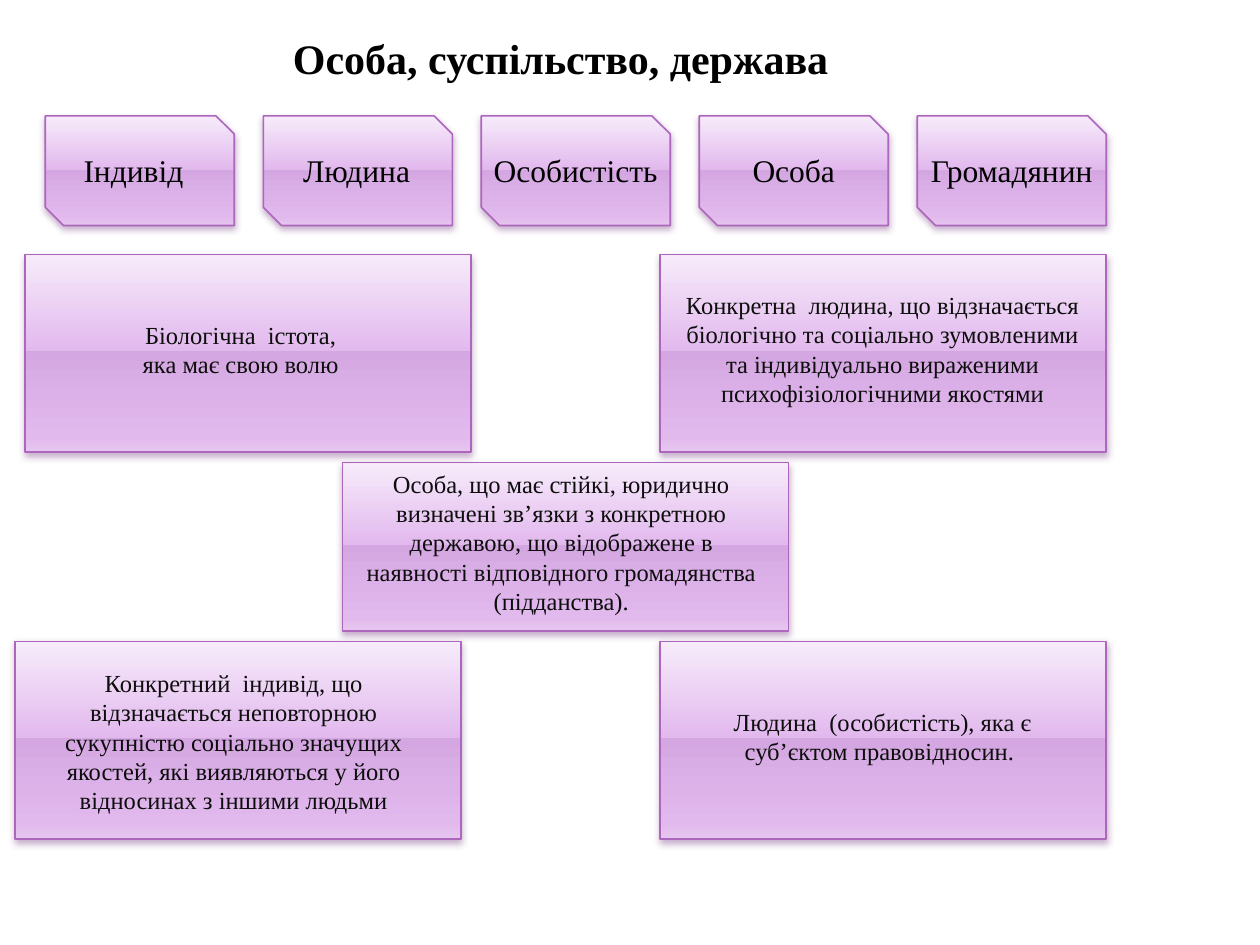
from lxml import etree
from pptx import Presentation
from pptx.dml.color import RGBColor
from pptx.enum.shapes import MSO_SHAPE as SHAPE
from pptx.enum.text import MSO_ANCHOR as ANCHOR, MSO_AUTO_SIZE as AUTO, PP_ALIGN as ALIGN
from pptx.oxml.ns import qn
from pptx.util import Inches, Pt

BLACK = RGBColor(0x00, 0x00, 0x00)
INK = RGBColor(0x0D, 0x0D, 0x0D)
BORDER = RGBColor(0xAC, 0x66, 0xBB)
SHADOW = RGBColor(0x6E, 0x30, 0x7B)
PALE = RGBColor(0xF7, 0xEB, 0xFB)
LILAC = RGBColor(0xE2, 0xB9, 0xED)
MAUVE = RGBColor(0xD5, 0xA7, 0xE2)
PINK = RGBColor(0xE6, 0xC6, 0xEF)
STOPS = [(0, PALE), (49, LILAC), (49, MAUVE), (92, LILAC), (100, PINK)]


class SlideBuilder:
    font = "Times New Roman"

    def __init__(self, slide):
        self.s = slide

    def color(self, parent, rgb):
        return etree.SubElement(parent, qn("a:srgbClr"), val=str(rgb))

    def box(self, shapes, kind, x, y, w, h):
        sp = shapes.add_shape(kind, Inches(x), Inches(y), Inches(w), Inches(h))
        sp.line.color.rgb = BORDER
        sp.line.width = Pt(0.9)
        # Glossy vertical gradient
        sp.fill.gradient()
        sp.fill.gradient_angle = 270
        stops = sp._element.spPr.find(qn("a:gradFill")).find(qn("a:gsLst"))
        for gs in list(stops):
            stops.remove(gs)
        for pos, rgb in STOPS:
            self.color(etree.SubElement(stops, qn("a:gs"), pos=str(pos * 1000)), rgb)
        # Soft shadow below
        sp.shadow.inherit = False
        effects = sp._element.spPr.find(qn("a:effectLst"))
        shadow = etree.SubElement(
            effects, qn("a:outerShdw"), blurRad=str(Pt(4)), dist=str(Pt(2)),
            dir="5400000", algn="ctr", rotWithShape="0")
        etree.SubElement(self.color(shadow, SHADOW), qn("a:alpha"), val="38000")
        return sp

    def text(self, shapes, x, y, w, h, lines, size, rgb=INK, bold=False, align=ALIGN.CENTER):
        tf = shapes.add_textbox(Inches(x), Inches(y), Inches(w), Inches(h)).text_frame
        tf.word_wrap = True
        tf.auto_size = AUTO.SHAPE_TO_FIT_TEXT
        tf.vertical_anchor = ANCHOR.TOP
        for i, line in enumerate(lines):
            p = tf.paragraphs[0] if i == 0 else tf.add_paragraph()
            p.alignment = align
            r = p.add_run()
            r.text = line
            r.font.name = self.font
            r.font.size = Pt(size)
            r.font.bold = bold
            r.font.color.rgb = rgb

    def terms(self, terms, x, step):
        shapes = self.s.shapes.add_group_shape().shapes
        for i in range(len(terms)):
            self.box(shapes, SHAPE.SNIP_2_DIAG_RECTANGLE, x + i * step, 0.92, 1.5, 0.87)
        for term, left, width, align in terms:
            self.text(shapes, left, 1.15, width, 0.4, [term], 18, BLACK, align=align)

    def definition(self, panel, label, lines):
        self.box(self.s.shapes, SHAPE.RECTANGLE, *panel)
        self.text(self.s.shapes, *label, lines, 14)


def main():
    prs = Presentation()
    prs.slide_width, prs.slide_height = Inches(10), Inches(7.5)
    b = SlideBuilder(prs.slides.add_slide(prs.slide_layouts[6]))

    # Title
    b.text(b.s.shapes, 1.38, 0.21, 6.14, 0.5, ["Особа, суспільство, держава"], 24, BLACK, True)

    # Row of terms: text, left, width, alignment
    b.terms([
        ("Індивід", 0.43, 1.26, ALIGN.CENTER),
        ("Людина", 2.24, 1.18, ALIGN.CENTER),
        ("Особистість", 3.82, 1.57, ALIGN.LEFT),
        ("Особа", 5.63, 1.34, ALIGN.CENTER),
        ("Громадянин", 7.28, 1.5, ALIGN.CENTER),
    ], 0.36, 1.73)

    # Definitions: panel, label position, lines
    w, h = 3.54, 1.57
    top, bottom, right = 2.02, 5.09, 5.24
    definitions = [
        ((2.72, 3.67, w, 1.34), (2.8, 3.67, 3.31, 1.51),
         ["Особа, що має стійкі, юридично визначені зв’язки з конкретною державою, "
          "що відображене в наявності відповідного громадянства (підданства)."]),
        ((0.2, top, w, h), (0.28, 2.49, 3.31, 0.81),
         ["Біологічна  істота, ", "яка має свою волю "]),
        ((0.12, bottom, w, h), (0.2, 5.25, 3.31, 1.28),
         ["Конкретний  індивід, що відзначається неповторною сукупністю соціально "
          "значущих якостей, які виявляються у його відносинах з іншими людьми"]),
        ((right, bottom, w, h), (5.39, 5.56, 3.23, 0.81),
         ["Людина  (особистість), яка є суб’єктом правовідносин. "]),
        ((right, top, w, h), (5.31, 2.25, 3.39, 1.28),
         ["Конкретна  людина, що відзначається біологічно та соціально зумовленими "
          "та індивідуально вираженими психофізіологічними якостями"]),
    ]
    for panel, label, lines in definitions:
        b.definition(panel, label, lines)

    prs.save("out.pptx")


if __name__ == "__main__":
    main()
